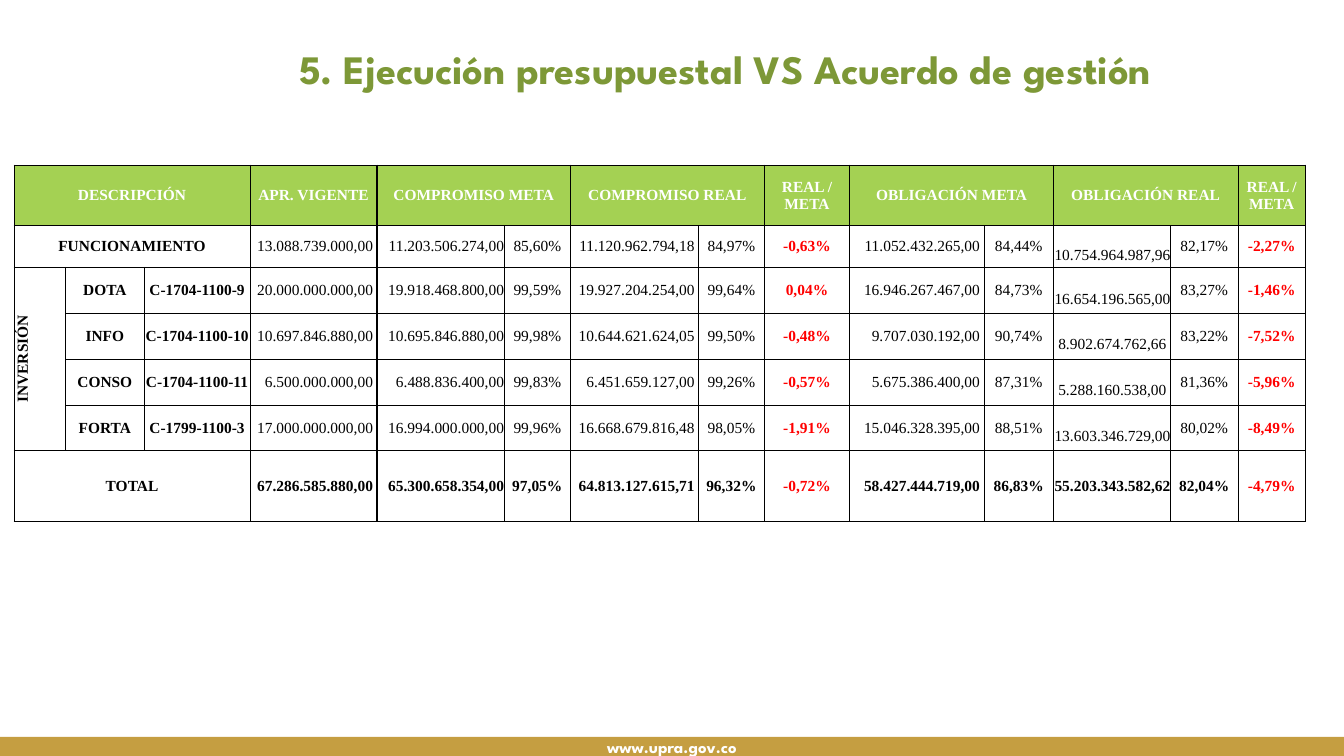
from lxml.etree import SubElement, Element
from pptx import Presentation
from pptx.dml.color import RGBColor
from pptx.enum.shapes import MSO_SHAPE
from pptx.enum.text import MSO_ANCHOR, PP_ALIGN
from pptx.oxml.ns import qn
from pptx.util import Inches, Pt

# Content
TITLE = "5. Ejecución presupuestal VS Acuerdo de gestión"
FOOTER = "www.upra.gov.co"
HEADERS = {0: "DESCRIPCIÓN", 3: "APR. VIGENTE", 4: "COMPROMISO META",
           6: "COMPROMISO REAL", 8: "REAL / META", 9: "OBLIGACIÓN META",
           11: "OBLIGACIÓN REAL", 13: "REAL / META"}
LABELS = [
    ("FUNCIONAMIENTO", "", ""),
    ("INVERSIÓN", "DOTA", "C-1704-1100-9"),
    ("", "INFO", "C-1704-1100-10"),
    ("", "CONSO", "C-1704-1100-11"),
    ("", "FORTA", "C-1799-1100-3"),
    ("TOTAL", "", ""),
]
FIGURES = [
    ("13.088.739.000,00", "11.203.506.274,00", "85,60%", "11.120.962.794,18", "84,97%", "-0,63%",
     "11.052.432.265,00", "84,44%", "10.754.964.987,96", "82,17%", "-2,27%"),
    ("20.000.000.000,00", "19.918.468.800,00", "99,59%", "19.927.204.254,00", "99,64%", "0,04%",
     "16.946.267.467,00", "84,73%", "16.654.196.565,00", "83,27%", "-1,46%"),
    ("10.697.846.880,00", "10.695.846.880,00", "99,98%", "10.644.621.624,05", "99,50%", "-0,48%",
     "9.707.030.192,00", "90,74%", "8.902.674.762,66", "83,22%", "-7,52%"),
    ("6.500.000.000,00", "6.488.836.400,00", "99,83%", "6.451.659.127,00", "99,26%", "-0,57%",
     "5.675.386.400,00", "87,31%", "5.288.160.538,00", "81,36%", "-5,96%"),
    ("17.000.000.000,00", "16.994.000.000,00", "99,96%", "16.668.679.816,48", "98,05%", "-1,91%",
     "15.046.328.395,00", "88,51%", "13.603.346.729,00", "80,02%", "-8,49%"),
    ("67.286.585.880,00", "65.300.658.354,00", "97,05%", "64.813.127.615,71", "96,32%", "-0,72%",
     "58.427.444.719,00", "86,83%", "55.203.343.582,62", "82,04%", "-4,79%"),
]

# Look and layout
COLORS = {"title": "7D9837", "footer": "C59E41", "header": "A4D153",
          "white": "FFFFFF", "black": "000000", "red": "FF0000"}
TITLE_FONT, TABLE_FONT = "League Spartan", "Times New Roman"
COLUMN_WIDTHS = [0.51, 0.78, 1.05, 1.26, 1.26, 0.66, 1.27, 0.65, 0.85, 1.33, 0.69, 1.16, 0.67, 0.67]
ROW_HEIGHTS = [0.6, 0.41, 0.46, 0.45, 0.46, 0.45, 0.7]
LAST_ROW = len(ROW_HEIGHTS) - 1
MERGES = [((0, 0), (0, 2)), ((0, 4), (0, 5)), ((0, 6), (0, 7)), ((0, 9), (0, 10)),
          ((0, 11), (0, 12)), ((1, 0), (1, 2)), ((2, 0), (5, 0)), ((6, 0), (6, 2))]
AMOUNT_COLUMNS = (3, 4, 6, 9, 11)
RATIO_COLUMNS = (8, 13)
GROUP_STARTS, GROUP_ENDS = (0, 4, 9), (3, 8, 13)


def style_text(text_frame, text, font_name, size, color, align, bold=True):
    text_frame.text = text
    paragraph = text_frame.paragraphs[0]
    paragraph.alignment = align
    for run in paragraph.runs:
        run.font.name = font_name
        run.font.size = Pt(size)
        run.font.bold = bold
        run.font.color.rgb = RGBColor.from_string(COLORS[color])
    return paragraph


def add_borders(cell, row, column):
    """Thick lines frame the table and its column groups; the rest are thin."""
    thick = {"a:lnL": column in GROUP_STARTS, "a:lnR": column in GROUP_ENDS,
             "a:lnT": row == 0, "a:lnB": row == LAST_ROW}
    properties = cell._tc.get_or_add_tcPr()
    for position, (side, is_thick) in enumerate(thick.items()):
        line = Element(qn(side), w=str(Pt(1 if is_thick else 0.5)))
        fill = SubElement(line, qn("a:solidFill"))
        SubElement(fill, qn("a:srgbClr"), val=COLORS["black"])
        properties.insert(position, line)


def style_cell(cell, row, column, text):
    cell.vertical_anchor = MSO_ANCHOR.MIDDLE
    cell.margin_left = cell.margin_right = cell.margin_top = cell.margin_bottom = 0
    is_amount = row > 0 and column in AMOUNT_COLUMNS
    if is_amount:
        # Full-width amounts need the whole cell in the two tight columns
        tight = column == 4 or (column == 11 and len(text) > 16)
        cell.margin_right = Inches(0 if tight else 0.04)
        if column == 11 and row < LAST_ROW:
            cell.margin_top = Inches(0.17)
    if row == 0:
        color = "white"
        cell.fill.solid()
        cell.fill.fore_color.rgb = RGBColor.from_string(COLORS["header"])
    else:
        color = "red" if column in RATIO_COLUMNS else "black"
        cell.fill.background()
    bold = row in (0, LAST_ROW) or column < 3 or column in RATIO_COLUMNS
    style_text(cell.text_frame, text, TABLE_FONT, 11, color,
               PP_ALIGN.RIGHT if is_amount else PP_ALIGN.CENTER, bold)
    add_borders(cell, row, column)


presentation = Presentation()
presentation.slide_width, presentation.slide_height = Inches(13.33), Inches(7.5)
slide = presentation.slides.add_slide(presentation.slide_layouts[6])

# Footer band
footer = slide.shapes.add_shape(MSO_SHAPE.RECTANGLE, 0, Inches(7.31), Inches(13.33), Inches(0.19))
footer.shadow.inherit = False
footer.fill.solid()
footer.fill.fore_color.rgb = RGBColor.from_string(COLORS["footer"])
footer.line.fill.background()
footer.text_frame.vertical_anchor = MSO_ANCHOR.MIDDLE
style_text(footer.text_frame, FOOTER, TITLE_FONT, 12, "white", PP_ALIGN.CENTER)

# Title
title = slide.shapes.add_textbox(Inches(1.82), Inches(0.44), Inches(9.7), Inches(0.87))
title.text_frame.word_wrap = True
heading = style_text(title.text_frame, TITLE, TITLE_FONT, 28.8, "title", PP_ALIGN.RIGHT)
heading.line_spacing = 0.9

# Budget table
table = slide.shapes.add_table(
    len(ROW_HEIGHTS), len(COLUMN_WIDTHS), Inches(0.14), Inches(1.64),
    Inches(sum(COLUMN_WIDTHS)), Inches(sum(ROW_HEIGHTS))).table
table.first_row = table.horz_banding = False
for table_column, width in zip(table.columns, COLUMN_WIDTHS):
    table_column.width = Inches(width)
for table_row, height in zip(table.rows, ROW_HEIGHTS):
    table_row.height = Inches(height)
for start, end in MERGES:
    table.cell(*start).merge(table.cell(*end))

header_row = [HEADERS.get(column, "") for column in range(len(COLUMN_WIDTHS))]
body_rows = [labels + figures for labels, figures in zip(LABELS, FIGURES)]
for row, texts in enumerate([header_row] + body_rows):
    for column, text in enumerate(texts):
        style_cell(table.cell(row, column), row, column, text)
table.cell(2, 0)._tc.get_or_add_tcPr().set("vert", "vert270")

presentation.save("out.pptx")
